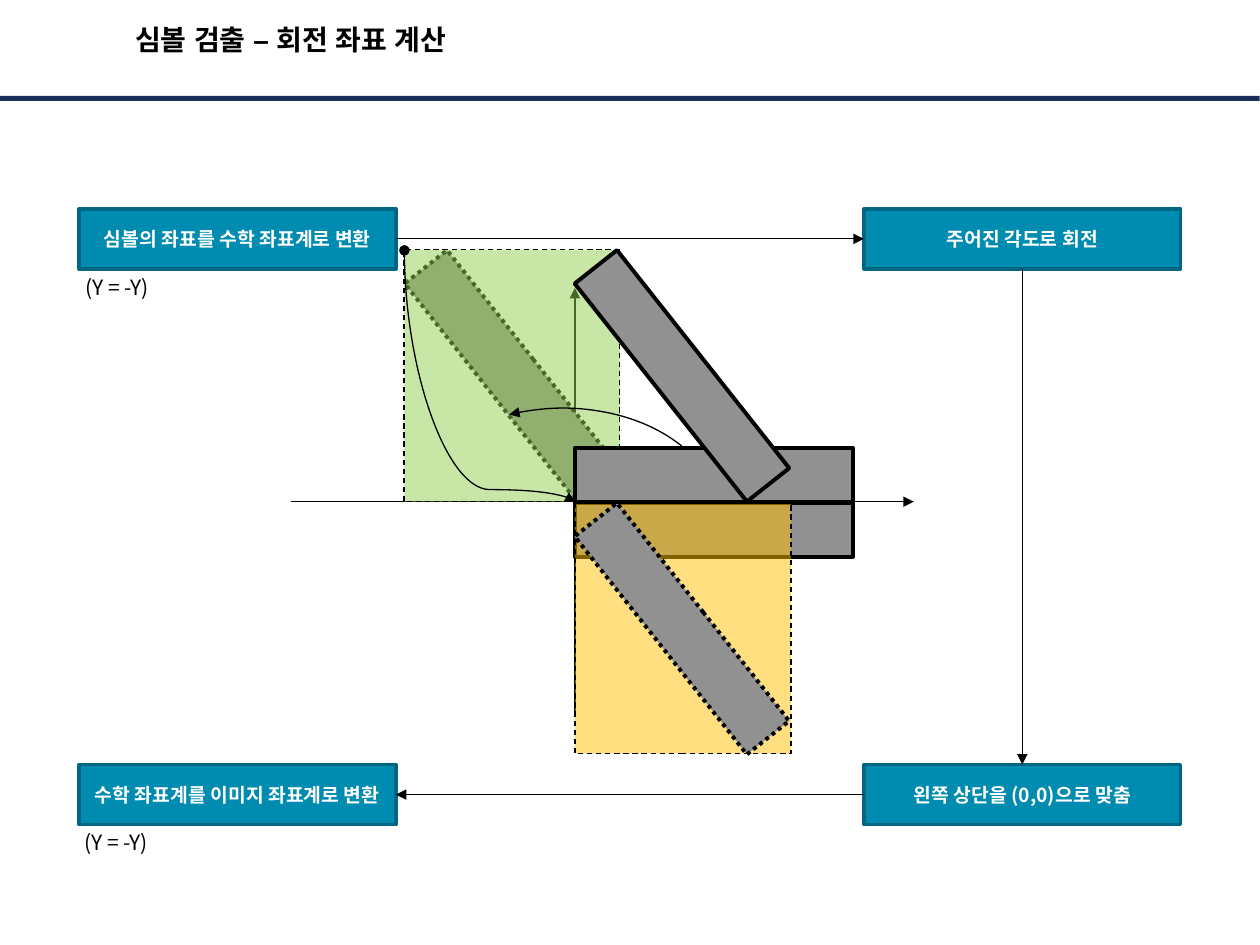
import pptx
import pptx.util
import pptx.dml.color
import pptx.enum.dml
import pptx.enum.shapes
import pptx.enum.text
import pptx.oxml
import pptx.oxml.ns
from dataclasses import dataclass
from lxml import etree

qn = pptx.oxml.ns.qn
SHAPE = pptx.enum.shapes.MSO_SHAPE
LINK = pptx.enum.shapes.MSO_CONNECTOR
DASH = pptx.enum.dml.MSO_LINE
Pt = pptx.util.Pt
rgb = pptx.dml.color.RGBColor.from_string


@dataclass
class Theme:
    ink: str = "000000"
    white: str = "FFFFFF"
    navy: str = "1B2E5A"
    step: str = "008BB0"
    step_edge: str = "006782"
    bar: str = "919191"
    green: str = "92D050"
    amber: str = "FFC000"
    title_font: str = "Arial"
    font: str = "Noto Sans CJK KR"
    title_size: int = 16
    step_size: int = 11
    note_size: int = 12
    thin: float = 0.75
    edge: float = 2
    thick: float = 2.25


T = Theme()


def px(*values):
    return [pptx.util.Emu(round(v * 914400 / 126.4)) for v in values]


def add_box(box, fill, edge, width, dash=None, rotation=0, kind=SHAPE.RECTANGLE):
    s = slide.shapes.add_shape(kind, *px(*box))
    s.shadow.inherit = False
    s.rotation = rotation
    if fill:
        s.fill.solid()
        s.fill.fore_color.rgb = rgb(fill)
    else:
        s.fill.background()
    if edge:
        s.line.color.rgb = rgb(edge)
        s.line.width = Pt(width)
        s.line.dash_style = dash
    else:
        s.line.fill.background()
    return s


prs = pptx.Presentation()
prs.slide_width = pptx.util.Inches(9.97)
prs.slide_height = pptx.util.Inches(7.48)
slide = prs.slides.add_slide(prs.slide_layouts[5])
texts = []  # text frame, wording, size, colour, bold, font
lines = []  # line shape, head end, tail end

# Title and the rule under it
title = slide.shapes.title
title.left, title.top, title.width, title.height = px(16, 10, 550, 59)
texts.append((title.text_frame, "심볼 검출 – 회전 좌표 계산", T.title_size, T.ink, True, T.title_font))
add_box((0, 96, 1260, 5), T.navy, None, 0)

# Axes
for x1, y1, x2, y2 in [(291, 502, 914, 502), (575, 717, 575, 288)]:
    axis = slide.shapes.add_connector(LINK.STRAIGHT, *px(x1, y1, x2, y2))
    lines.append((axis, None, "triangle"))

# Four steps, clockwise from the top left
steps = []
for x, y, words in [
    (79, 209, "심볼의 좌표를 수학 좌표계로 변환"),
    (864, 209, "주어진 각도로 회전"),
    (864, 765, "왼쪽 상단을 (0,0)으로 맞춤"),
    (79, 765, "수학 좌표계를 이미지 좌표계로 변환"),
]:
    s = add_box((x, y, 317, 60), T.step, T.step_edge, T.edge)
    texts.append((s.text_frame, words, T.step_size, T.white, True, T.font))
    steps.append(s)

# Arrows between steps: sites are 0 top, 1 left, 2 bottom, 3 right
for i, (start, end) in enumerate([(3, 1), (2, 0), (1, 3)]):
    c = slide.shapes.add_connector(LINK.STRAIGHT, 0, 0, 0, 0)
    c.begin_connect(steps[i], start)
    c.end_connect(steps[i + 1], end)
    lines.append((c, None, "triangle"))

# Notes under the left steps
for x, y in [(74, 270), (73, 825)]:
    tb = slide.shapes.add_textbox(*px(x, y, 86, 35))
    texts.append((tb.text_frame, "(Y = -Y)", T.note_size, T.ink, False, T.font))

# Bars and bounding boxes, from back to front
BAR, FRAME, TILT = (278, 54), (216, 252), 231.7
add_box((575, 503, *BAR), T.bar, T.ink, T.thick)
add_box((373, 349, *BAR), T.bar, T.ink, T.thick, DASH.ROUND_DOT, TILT)
for x, y, color in [(404, 250, T.green), (575, 502, T.amber)]:
    s = add_box((x, y, *FRAME), color, T.ink, T.thin, DASH.DASH)
    clr = s._element.spPr.find(qn("a:solidFill"))[0]
    etree.SubElement(clr, qn("a:alpha"), val="50000")
add_box((543, 602, *BAR), T.bar, T.ink, T.thick, DASH.ROUND_DOT, TILT)

# Rotation arc
arc = add_box((353, 411, 377, 288), None, T.ink, T.thin, rotation=347.1, kind=SHAPE.ARC)
arc.adjustments[0], arc.adjustments[1] = 162, 213.73
lines.append((arc, "triangle", None))

# Curve that moves the top left corner to the origin
curve = slide.shapes.add_connector(LINK.CURVE, *px(616, 291, 364, 462))
curve._element.spPr.find(qn("a:xfrm")).set("rot", str(270 * 60000))
guides = curve._element.spPr.find(qn("a:prstGeom")).get_or_add_avLst()
etree.SubElement(guides, qn("a:gd"), name="adj1", fmla="val 95000")
lines.append((curve, "oval", "triangle"))

# Bars in front
add_box((575, 448, *BAR), T.bar, T.ink, T.thick)
add_box((543, 349, *BAR), T.bar, T.ink, T.thick, rotation=TILT)

# Line style and arrowheads
for s, head, tail in lines:
    s.line.color.rgb = rgb(T.ink)
    s.line.width = Pt(T.thin)
    ln = s._element.spPr.find(qn("a:ln"))
    for tag, end in [("a:headEnd", head), ("a:tailEnd", tail)]:
        if end:
            etree.SubElement(ln, qn(tag), type=end)
    if s._element.spPr.find(qn("a:effectLst")) is None:
        etree.SubElement(s._element.spPr, qn("a:effectLst"))

# Text style
for tf, words, size, color, bold, font in texts:
    tf.word_wrap = False
    tf.vertical_anchor = pptx.enum.text.MSO_ANCHOR.MIDDLE
    tf.margin_left = tf.margin_right = tf.margin_top = tf.margin_bottom = Pt(3)
    p = tf.paragraphs[0]
    p.text = words
    p.alignment = pptx.enum.text.PP_ALIGN.CENTER
    p.font.size = Pt(size)
    p.font.bold = bold
    p.font.color.rgb = rgb(color)
    p.font.name = font
    etree.SubElement(p._p.pPr.find(qn("a:defRPr")), qn("a:ea"), typeface=font)

prs.save("out.pptx")
